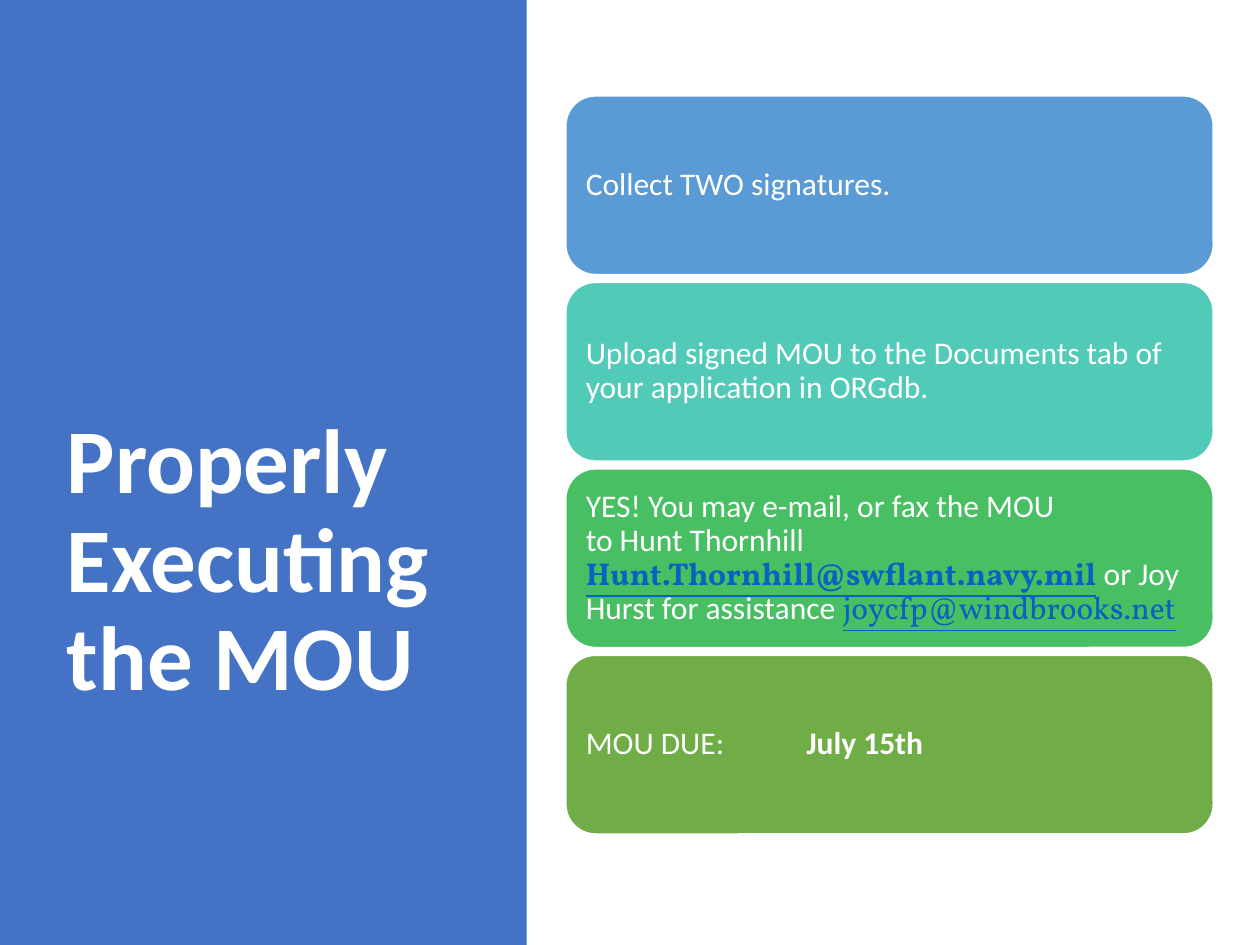
from pptx import Presentation
from pptx.dml.color import RGBColor
from pptx.enum.shapes import MSO_SHAPE
from pptx.enum.text import MSO_ANCHOR, PP_ALIGN
from pptx.oxml import parse_xml
from pptx.oxml.ns import nsdecls
from pptx.util import Inches, Pt

COLORS = {
    "panel": "4472C4",
    "white": "FFFFFF",
    "link": "0563C1",
    "blue": "5B9BD5",
    "teal": "52CAB8",
    "green": "49BF64",
    "olive": "70AD47",
}

# Each step: fill colour, then its text as (wording, style) pairs
STEPS = [
    ("blue", [("Collect TWO signatures.", "plain")]),
    ("teal", [("Upload signed MOU to the Documents tab of your application in ORGdb.", "plain")]),
    ("green", [
        ("YES! You may e-mail, or fax the MOU", "plain"),
        ("\v", "break"),
        ("to Hunt Thornhill ", "plain"),
        ("Hunt.Thornhill@swflant.navy.mil", "bold link"),
        (" or Joy Hurst for assistance ", "plain"),
        ("joycfp@windbrooks.net", "link"),
    ]),
    ("olive", [("MOU DUE:\t", "plain"), ("July 15th", "bold")]),
]
STEP_TOP, STEP_HEIGHT, STEP_GAP = 0.76, 1.42, 0.06
DUE_DATE_TAB = Inches(1.75)


def color(name):
    return RGBColor.from_string(COLORS[name])


def add_block(kind, left, top, width, height, fill):
    """Add a shadowless filled shape; sizes in inches."""
    block = slide.shapes.add_shape(
        kind, Inches(left), Inches(top), Inches(width), Inches(height))
    block.shadow.inherit = False
    block.fill.solid()
    block.fill.fore_color.rgb = color(fill)
    return block


prs = Presentation()
prs.slide_width, prs.slide_height = Inches(10), Inches(7.5)
slide = prs.slides.add_slide(prs.slide_layouts[5])

panel = add_block(MSO_SHAPE.RECTANGLE, 0, 0, 4.18, 7.5, "panel")
panel.line.fill.background()

# Title, brought in front of the panel
title = slide.shapes.title
slide.shapes._spTree.append(title._element)
title.left, title.top = Inches(0.43), Inches(0.68)
title.width, title.height = Inches(3.12), Inches(6.02)
title_frame = title.text_frame
title_frame.text = "Properly Executing the MOU"
title_frame.word_wrap = True
title_frame.vertical_anchor = MSO_ANCHOR.MIDDLE
title_frame.margin_top = Inches(1.6)
heading = title_frame.paragraphs[0]
heading.alignment = PP_ALIGN.LEFT
heading.line_spacing = 0.9
heading.font.name = "Calibri"
heading.font.size = Pt(52)
heading.font.bold = True
heading.font.color.rgb = color("white")

for index, (fill, parts) in enumerate(STEPS):
    top = STEP_TOP + index * (STEP_HEIGHT + STEP_GAP)
    step = add_block(MSO_SHAPE.ROUNDED_RECTANGLE, 4.49, top, 5.14, STEP_HEIGHT, fill)
    step.line.color.rgb = color("white")
    step.line.width = Pt(1)

    frame = step.text_frame
    frame.word_wrap = True
    frame.vertical_anchor = MSO_ANCHOR.MIDDLE
    frame.margin_left = frame.margin_right = Inches(0.09)
    frame.margin_top = frame.margin_bottom = Inches(0.07)

    paragraph = frame.paragraphs[0]
    paragraph.alignment = PP_ALIGN.LEFT
    paragraph.line_spacing = 0.9
    if any("\t" in wording for wording, _ in parts):
        paragraph._p.get_or_add_pPr().append(parse_xml(
            f'<a:tabLst {nsdecls("a")}><a:tab pos="{DUE_DATE_TAB}" algn="l"/></a:tabLst>'))
    paragraph.font.size = Pt(18)

    for wording, style in parts:
        if style == "break":
            paragraph.add_line_break()
            continue
        run = paragraph.add_run()
        run.text = wording
        is_link = "link" in style
        run.font.name = "Vollkorn" if is_link else "Calibri"
        run.font.size = Pt(18)
        run.font.bold = "bold" in style
        run.font.underline = is_link
        run.font.color.rgb = color("link" if is_link else "white")

prs.save("out.pptx")
